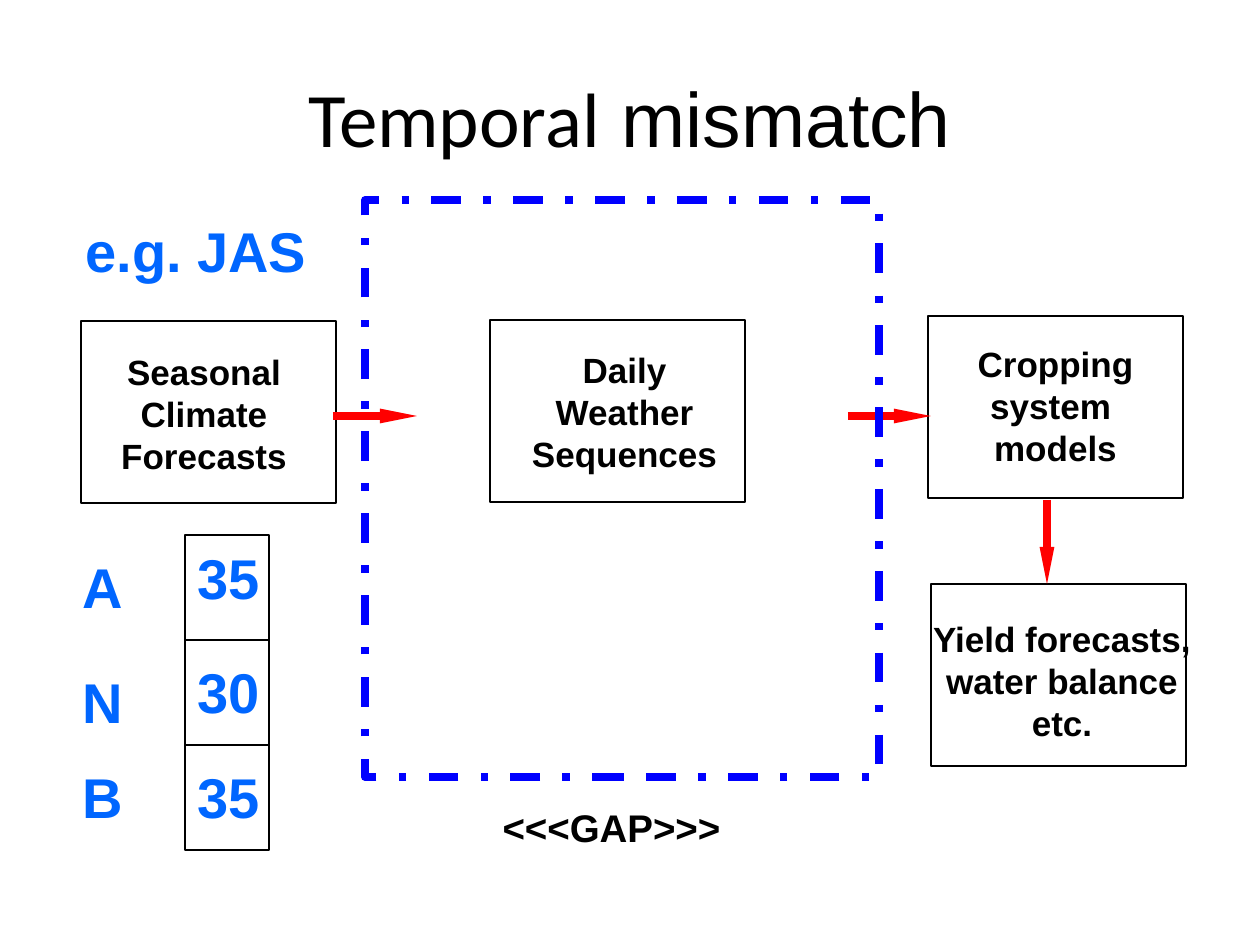
from lxml import etree
from pptx import Presentation
from pptx.dml.color import RGBColor
from pptx.enum.dml import MSO_LINE
from pptx.enum.shapes import MSO_CONNECTOR, MSO_SHAPE
from pptx.enum.text import MSO_ANCHOR, MSO_AUTO_SIZE, PP_ALIGN
from pptx.oxml.ns import qn
from pptx.util import Emu, Inches, Pt

RECTANGLE = MSO_SHAPE.RECTANGLE
STRAIGHT = MSO_CONNECTOR.STRAIGHT
DASH_DOT = MSO_LINE.DASH_DOT
MIDDLE = MSO_ANCHOR.MIDDLE
FIXED, GROW = MSO_AUTO_SIZE.NONE, MSO_AUTO_SIZE.SHAPE_TO_FIT_TEXT
LEFT, CENTER = PP_ALIGN.LEFT, PP_ALIGN.CENTER

EMU_PER_PX = Inches(1) / 126
BLACK, RED, BLUE, AZURE = "000000", "FF0000", "0000FF", "0066FF"


def px(length):
    return Emu(round(length * EMU_PER_PX))


def color(value):
    return RGBColor.from_string(value)


class SlidePainter:
    """Holds the style and the slide; `shapes` is the current drawing target."""

    label = {"name": "Arial", "size": Pt(20), "bold": True}
    title_format = {"name": "Calibri", "size": Pt(44), "bold": False}
    thin, thick = Pt(0.75), Pt(4.25)

    def __init__(self, slide):
        self.slide = slide
        self.shapes = slide.shapes

    def start_group(self):
        self.shapes = self.slide.shapes.add_group_shape().shapes

    def end_group(self):
        self.shapes = self.slide.shapes

    def box(self, left, top, width, height, line=BLACK, weight=thin, dash=None):
        box = self.shapes.add_shape(RECTANGLE, *map(px, (left, top, width, height)))
        box.shadow.inherit = False
        box.fill.background()
        box.line.color.rgb = color(line)
        box.line.width = weight
        if dash:
            box.line.dash_style = dash

    def text(self, left, top, width, height, spans, align=CENTER, wrap=True,
             ink=BLACK, **frame_format):
        """Spans are (wording, format changes) pairs in one paragraph."""
        box = self.shapes.add_textbox(*map(px, (left, top, width, height)))
        frame = box.text_frame
        frame.word_wrap = wrap
        for name, value in ({"auto_size": GROW} | frame_format).items():
            setattr(frame, name, value)
        para = frame.paragraphs[0]
        para.alignment = align
        for wording, changes in spans:
            span = para.add_run()
            span.text = wording
            span.font.color.rgb = color(ink)
            for name, value in (self.label | changes).items():
                setattr(span.font, name, value)

    def big_label(self, left, top, width, wording):
        self.text(left, top, width, 80, [(wording, {"size": Pt(32)})],
                  align=LEFT, wrap=False, ink=AZURE)

    def arrow(self, x1, y1, x2, y2):
        arrow = self.shapes.add_connector(STRAIGHT, *map(px, (x1, y1, x2, y2)))
        arrow.line.color.rgb = color(RED)
        arrow.line.width = self.thick
        properties = arrow._element.spPr
        etree.SubElement(properties.find(qn("a:ln")), qn("a:tailEnd"),
                         type="triangle", w="sm", len="lg")
        etree.SubElement(properties, qn("a:effectLst"))


def main():
    deck = Presentation()
    deck.slide_width, deck.slide_height = Inches(10), Inches(7.5)
    page = SlidePainter(deck.slides.add_slide(deck.slide_layouts[6]))
    box_size = (255, 182)

    # Title
    title = page.title_format
    page.text(63, 38, 1134, 158,
              [("Temporal", title), (" mismatch", title | {"name": "Arial"})],
              auto_size=FIXED, vertical_anchor=MIDDLE)

    # Forecast and model boxes with their labels
    steps = [
        (81, 321, (100, 344, 208, 139), "Seasonal Climate Forecasts"),
        (490, 320, (514, 342, 221, 139), "Daily Weather Sequences"),
        (928, 316, (945, 336, 221, 140), "Cropping system  models"),
        (931, 584, (920, 611, 284, 139), "Yield forecasts, water balance etc."),
    ]
    for left, top, label_area, wording in steps:
        page.box(left, top, *box_size)
        page.text(*label_area, [(wording, {})])

    # Arrows and the gap frame
    page.arrow(848, 416, 931, 416)
    page.arrow(1047, 500, 1047, 584)
    page.box(365, 200, 514, 577, line=BLUE, weight=page.thick, dash=DASH_DOT)
    page.text(459, 798, 305, 59, [("<<<GAP>>>", {"size": Pt(22)})])
    page.arrow(333, 416, 417, 416)

    # Tercile probabilities: above, near and below normal
    page.start_group()
    terciles = [("A", 546, "35", 537), ("N", 661, "30", 651), ("B", 756, "35", 756)]
    for row in range(len(terciles)):
        page.box(185, 535 + 105 * row, 84, 105)
    for name, name_top, value, value_top in terciles:
        page.big_label(185, value_top, 92, value)
        page.big_label(70, name_top, 70, name)
    page.end_group()
    page.big_label(73, 210, 246, "e.g. JAS")

    deck.save("out.pptx")


if __name__ == "__main__":
    main()
